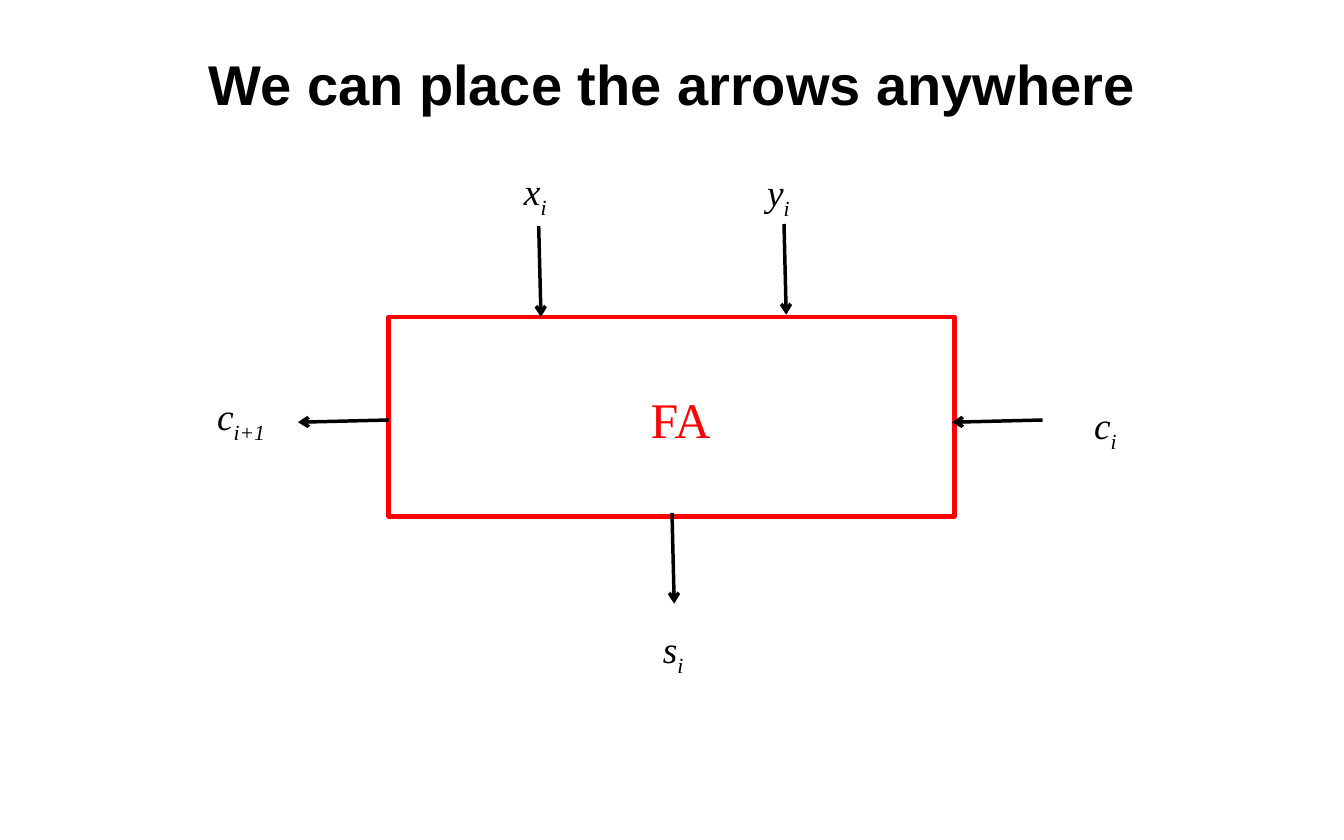
from pptx import Presentation
from pptx.dml.color import RGBColor
from pptx.enum.shapes import MSO_CONNECTOR as Conn, MSO_SHAPE as Shape
from pptx.enum.text import MSO_ANCHOR as Anchor, PP_ALIGN as Align
from pptx.oxml.ns import qn
from pptx.util import Inches, Pt
from lxml.etree import SubElement

COLORS = {"ink": "000000", "box": "FF0000"}
TITLE = "We can place the arrows anywhere"
BLOCK = (3.47, 2.83, 5.05, 1.78)
RUN, SLANT = 0.81, 0.02  # arrow length and its slight tilt

# letter, subscript, left, top, width
SIGNALS = [
    ("x", "i", 4.58, 1.41, 0.41),
    ("y", "i", 6.75, 1.42, 0.41),
    ("s", "i", 5.82, 5.5, 0.4),
    ("c", "i+1", 1.84, 3.42, 0.68),
    ("c", "i", 9.67, 3.5, 0.41),
]
DOWN = [(4.81, 2.02), (7, 2), (6, 4.58)]
LEFT = [(9.31, 3.75), (3.47, 3.75)]

HEAD = {"size": Pt(36), "name": "Arial", "bold": True}
NAME = {"size": Pt(32), "name": "Times New Roman"}
SIGN = {"size": Pt(24), "name": "Times New Roman", "italic": True}


def rgb(key):
    return RGBColor.from_string(COLORS[key])


def add_text(slide, place, parts, style, color="ink", wrap=False,
             align=Align.LEFT, inset=None):
    """Add a one-line text box; parts after the first are subscripts."""
    frame = slide.shapes.add_textbox(*map(Inches, place)).text_frame
    frame.word_wrap = wrap
    frame.vertical_anchor = Anchor.TOP
    if inset is not None:
        for side in ("left", "top", "right", "bottom"):
            setattr(frame, f"margin_{side}", Inches(inset))
    para = frame.paragraphs[0]
    para.alignment = align
    para.line_spacing = 1.1
    for n, part in enumerate(parts):
        run = para.add_run()
        run.text = part
        for key, val in style.items():
            setattr(run.font, key, val)
        run.font.color.rgb = rgb(color)
        if n:
            run.font._element.set("baseline", "-25000")


def add_arrow(slide, x, y, dx, dy):
    ends = map(Inches, (x, y, x + dx, y + dy))
    arrow = slide.shapes.add_connector(Conn.STRAIGHT, *ends)
    arrow.line.color.rgb = rgb("ink")
    arrow.line.width = Pt(2.25)
    SubElement(arrow.line._get_or_add_ln(), qn("a:tailEnd"), type="arrow")
    SubElement(arrow._element.spPr, qn("a:effectLst"))


def add_block(slide):
    block = slide.shapes.add_shape(Shape.RECTANGLE, *map(Inches, BLOCK))
    block.shadow.inherit = False
    block.fill.background()
    block.line.color.rgb = rgb("box")
    block.line.width = Pt(3)


def main():
    deck = Presentation()
    deck.slide_width, deck.slide_height = Inches(12), Inches(7.5)
    slide = deck.slides.add_slide(deck.slide_layouts[6])

    add_text(slide, (5.81, 3.42, 0.54, 0.54), ["FA"], NAME, "box", inset=0)
    add_text(slide, (1, 0.33, 10, 0.92), [TITLE], HEAD, wrap=True,
             align=Align.CENTER)
    add_block(slide)
    for x, y in DOWN:
        add_arrow(slide, x, y, SLANT, RUN)
    for x, y in LEFT:
        add_arrow(slide, x, y, -RUN, SLANT)
    for letter, sub, x, y, width in SIGNALS:
        add_text(slide, (x, y, width, 0.5), [letter, sub], SIGN)

    deck.save("out.pptx")


if __name__ == "__main__":
    main()
